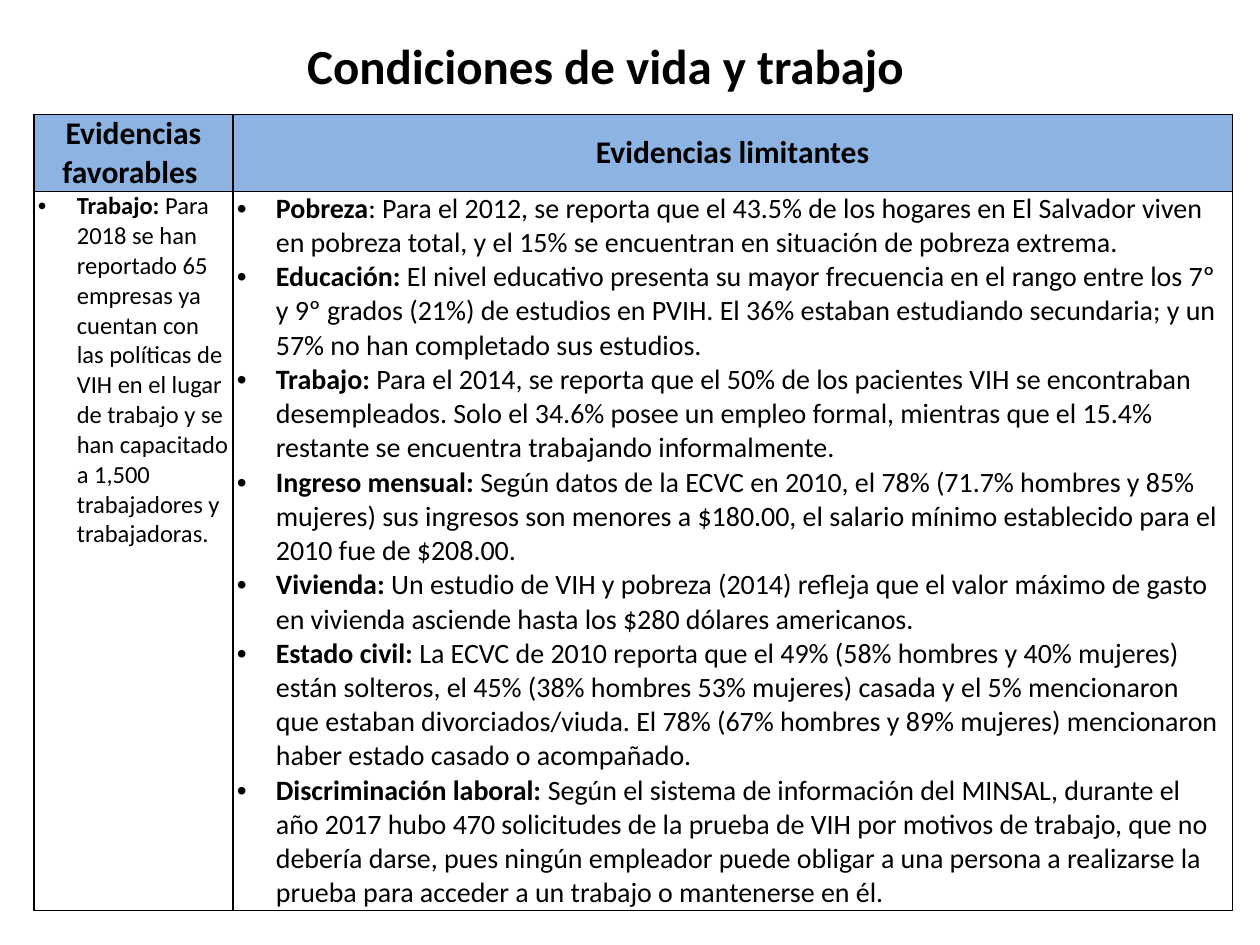
from lxml import etree
from pptx import Presentation
from pptx.dml.color import RGBColor
from pptx.enum.text import MSO_ANCHOR, PP_ALIGN
from pptx.oxml.ns import qn
from pptx.util import Inches, Pt

BLACK = RGBColor(0x00, 0x00, 0x00)
HEADER_BLUE = RGBColor(0x8D, 0xB3, 0xE2)
CENTER, LEFT = PP_ALIGN.CENTER, PP_ALIGN.LEFT
MIDDLE, TOP = MSO_ANCHOR.MIDDLE, MSO_ANCHOR.TOP
TITLE_ONLY = 5

TITLE = "Condiciones de vida y trabajo"
TITLE_BOX = (0.12, 0.23, 9.37, 0.57)
TABLE_BOX = (0.27, 0.91, 9.51, 6.28)
COLUMN_WIDTHS = (1.58, 7.93)
ROW_HEIGHTS = (0.6, 5.68)
HANGING_INDENT = 0.31

HEADERS = ("Evidencias favorables ", "Evidencias limitantes")
FAVORABLE = [
    ("Trabajo: ", "Para 2018 se han reportado 65 empresas ya cuentan con las políticas de VIH "
     "en el lugar de trabajo y se han capacitado a 1,500 trabajadores y trabajadoras."),
]
LIMITING = [
    ("Pobreza", ": Para el 2012, se reporta que el 43.5% de los hogares en El Salvador viven en "
     "pobreza total, y el 15% se encuentran en situación de pobreza extrema."),
    ("Educación: ", "El nivel educativo presenta su mayor frecuencia en el rango entre los 7º y "
     "9º grados (21%) de estudios en PVIH. El 36% estaban estudiando secundaria; y un 57% no "
     "han completado sus estudios."),
    ("Trabajo: ", "Para el 2014, se reporta que el 50% de los pacientes VIH se encontraban "
     "desempleados. Solo el 34.6% posee un empleo formal, mientras que el 15.4% restante se "
     "encuentra trabajando informalmente."),
    ("Ingreso mensual: ", "Según datos de la ECVC en 2010, el 78% (71.7% hombres y 85% mujeres) "
     "sus ingresos son menores a $180.00, el salario mínimo establecido para el 2010 fue de "
     "$208.00."),
    ("Vivienda: ", "Un estudio de VIH y pobreza (2014) refleja que el valor máximo de gasto en "
     "vivienda asciende hasta los $280 dólares americanos."),
    ("Estado civil: ", "La ECVC de 2010 reporta que el 49% (58% hombres y 40% mujeres) están "
     "solteros, el 45% (38% hombres 53% mujeres) casada y el 5% mencionaron que estaban "
     "divorciados/viuda. El 78% (67% hombres y 89% mujeres) mencionaron haber estado casado o "
     "acompañado."),
    ("Discriminación laboral: ", "Según el sistema de información del MINSAL, durante el año "
     "2017 hubo 470 solicitudes de la prueba de VIH por motivos de trabajo, que no debería "
     "darse, pues ningún empleador puede obligar a una persona a realizarse la prueba para "
     "acceder a un trabajo o mantenerse en él."),
]


def set_all(target, values):
    for name, value in values.items():
        setattr(target, name, value)


def add_span(para, text, size, bold):
    span = para.add_run()
    span.text = text
    set_all(span.font, {"name": "Calibri", "size": Pt(size), "bold": bold})
    span.font.color.rgb = BLACK


def add_bullet(para):
    props = para._p.get_or_add_pPr()
    props.set("marL", str(Inches(HANGING_INDENT)))
    props.set("indent", str(-Inches(HANGING_INDENT)))
    etree.SubElement(props, qn("a:buFont"), typeface="Arial")
    etree.SubElement(props, qn("a:buChar"), char="•")


def add_borders(cell):
    props = cell._tc.get_or_add_tcPr()
    for side in ("a:lnL", "a:lnR", "a:lnT", "a:lnB"):
        line = etree.SubElement(props, qn(side), w=str(Pt(1)))
        fill = etree.SubElement(line, qn("a:solidFill"))
        etree.SubElement(fill, qn("a:srgbClr"), val=str(BLACK))


def format_cell(cell, anchor):
    margin = Inches(0.03)
    set_all(cell, {"margin_left": margin, "margin_right": margin, "margin_top": 0,
                   "margin_bottom": 0, "vertical_anchor": anchor})
    add_borders(cell)


def fill_header(cell, text):
    format_cell(cell, MIDDLE)
    cell.fill.solid()
    cell.fill.fore_color.rgb = HEADER_BLUE
    para = cell.text_frame.paragraphs[0]
    para.alignment = CENTER
    add_span(para, text, 18, True)


def fill_evidence(cell, items, size, space_before):
    format_cell(cell, TOP)
    cell.fill.background()
    frame = cell.text_frame
    for index, (label, detail) in enumerate(items):
        para = frame.add_paragraph() if index else frame.paragraphs[0]
        set_all(para, {"alignment": LEFT, "space_before": Pt(space_before)})
        add_bullet(para)
        add_span(para, label, size, True)
        add_span(para, detail, size, False)


def place_title(page, box):
    title = page.shapes.title
    set_all(title, dict(zip(("left", "top", "width", "height"), map(Inches, box))))
    set_all(title.text_frame, {"word_wrap": True, "vertical_anchor": MIDDLE})
    para = title.text_frame.paragraphs[0]
    para.alignment = CENTER
    add_span(para, TITLE, 28, True)


def place_table(page, box):
    table = page.shapes.add_table(2, 2, *map(Inches, box)).table
    set_all(table, {"first_row": True, "horz_banding": False})
    for column, width in zip(table.columns, COLUMN_WIDTHS):
        column.width = Inches(width)
    for row, height in zip(table.rows, ROW_HEIGHTS):
        row.height = Inches(height)
    for index, text in enumerate(HEADERS):
        fill_header(table.cell(0, index), text)
    fill_evidence(table.cell(1, 0), FAVORABLE, 14, 6)
    fill_evidence(table.cell(1, 1), LIMITING, 16, 0)


def main():
    deck = Presentation()
    set_all(deck, {"slide_width": Inches(10), "slide_height": Inches(7.5)})
    page = deck.slides.add_slide(deck.slide_layouts[TITLE_ONLY])
    place_title(page, TITLE_BOX)
    place_table(page, TABLE_BOX)
    deck.save("out.pptx")


if __name__ == "__main__":
    main()
